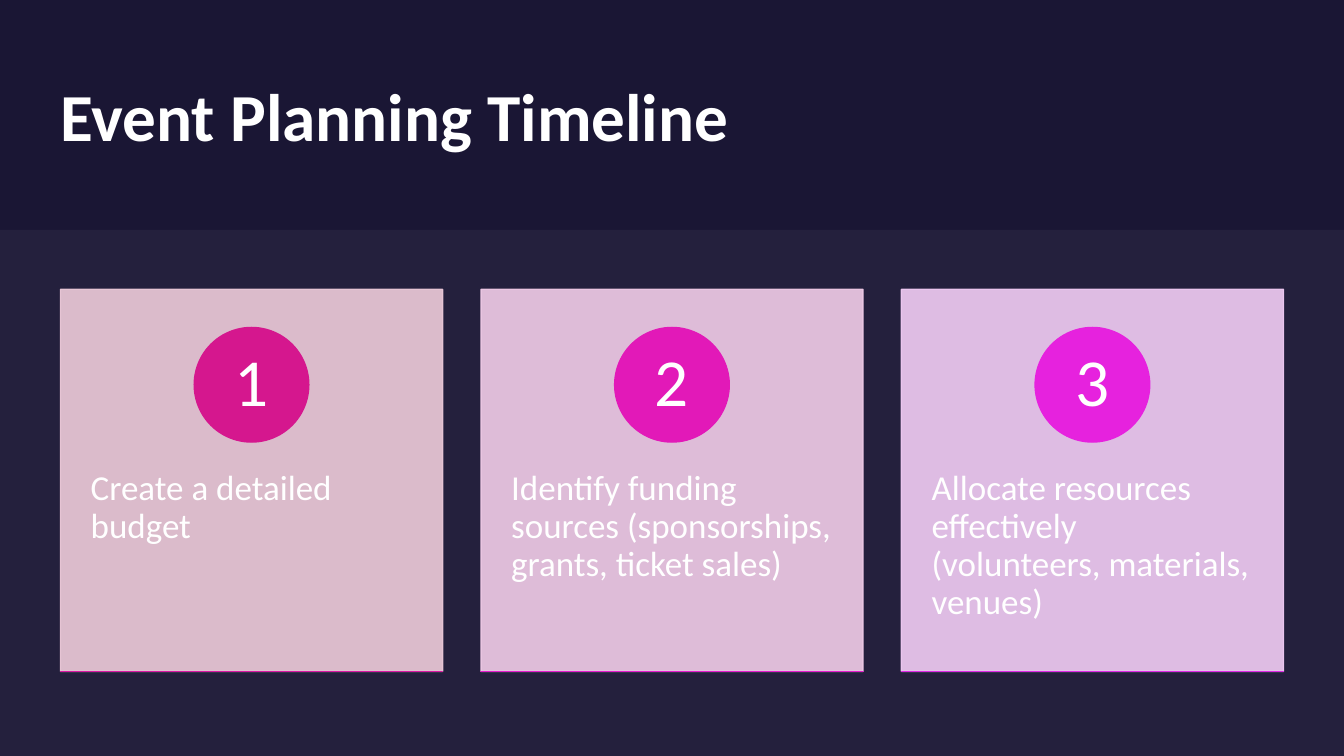
from lxml import etree
from pptx import Presentation
from pptx.dml.color import RGBColor
from pptx.enum.shapes import MSO_SHAPE
from pptx.enum.text import MSO_ANCHOR, MSO_AUTO_SIZE, PP_ALIGN
from pptx.oxml.ns import qn
from pptx.util import Inches, Pt

RECT, OVAL = MSO_SHAPE.RECTANGLE, MSO_SHAPE.OVAL
TOP, MIDDLE = MSO_ANCHOR.TOP, MSO_ANCHOR.MIDDLE
LEFT, CENTER = PP_ALIGN.LEFT, PP_ALIGN.CENTER
NO_FIT = MSO_AUTO_SIZE.NONE

FONT = "Calibri"
WIDTH, HEIGHT = 13.33, 7.5
MARGIN = 0.6
CARD_TOP = 2.87
CARD_SIZE = 3.79
BAND_TOP = 2.28

COLORS = {
    "night": "1A1634",
    "band": "E3E0F2",
    "text": "FFFFFF",
}
STEPS = [
    ("Create a detailed budget", "EFCCDB", "D5178E", "DB18A3"),
    ("Identify funding sources (sponsorships, grants, ticket sales)",
     "F3CDE9", "E219B8", "E61CCD"),
    ("Allocate resources effectively (volunteers, materials, venues)",
     "F3CDF6", "E622DE", "DF29E7"),
]


def inches(box):
    return [Inches(length) for length in box]


def set_opacity(color_format_parent, percent):
    for color in color_format_parent.iter(qn("a:srgbClr")):
        etree.SubElement(color, qn("a:alpha"), val=str(percent * 1000))


def add_panel(shapes, preset, box, color, opacity=100, outlined=True):
    panel = shapes.add_shape(preset, *inches(box))
    panel.shadow.inherit = False
    panel.fill.solid()
    panel.fill.fore_color.rgb = RGBColor.from_string(color)
    if outlined:
        panel.line.color.rgb = RGBColor.from_string(color)
        panel.line.width = Pt(1)
    else:
        panel.line.fill.background()
    if opacity < 100:
        set_opacity(panel._element.spPr, opacity)
    return panel


def write(frame, wording, size, insets, anchor=MIDDLE, align=LEFT,
          bold=False, spacing=0.9):
    frame.text = wording
    frame.word_wrap = True
    frame.auto_size = NO_FIT
    frame.vertical_anchor = anchor
    frame.margin_left = frame.margin_right = Inches(insets[0])
    frame.margin_top = frame.margin_bottom = Inches(insets[1])
    paragraph = frame.paragraphs[0]
    paragraph.alignment = align
    paragraph.line_spacing = spacing
    font = paragraph.runs[0].font
    font.name, font.size, font.bold = FONT, Pt(size), bold
    font.color.rgb = RGBColor.from_string(COLORS["text"])


def add_backdrop(slide):
    slide.background.fill.solid()
    slide.background.fill.fore_color.rgb = RGBColor.from_string(COLORS["night"])
    backdrop = add_panel(slide.shapes, RECT, (0, 0, WIDTH, HEIGHT),
                         COLORS["night"], outlined=False)
    slide.shapes._spTree.insert(2, backdrop._element)
    add_panel(slide.shapes, RECT, (0, BAND_TOP, WIDTH, HEIGHT - BAND_TOP),
              COLORS["band"], opacity=5, outlined=False)


def add_heading(slide, box):
    heading = slide.shapes.title
    heading.left, heading.top, heading.width, heading.height = inches(box)
    write(heading.text_frame, "Event Planning Timeline", 48, (0, 0),
          bold=True, spacing=1.0)


def add_step_card(slide, box, number, step):
    left, top, width, height = box
    wording, card_color, badge_color, edge_color = step
    card = slide.shapes.add_group_shape().shapes
    add_panel(card, RECT, box, card_color, opacity=90)

    description = card.add_textbox(
        *inches((left, top + 0.38 * height, width, 0.6 * height)))
    write(description.text_frame, wording, 25, (0.3, 0.36), anchor=TOP)

    diameter = 0.3 * height
    badge = add_panel(
        card, OVAL,
        (left + (width - diameter) / 2, top + 0.1 * height, diameter, diameter),
        badge_color)
    write(badge.text_frame, str(number), 48, (0.09, 0.01), align=CENTER)

    add_panel(card, RECT, (left, top + height, width, 0), edge_color)


def main():
    deck = Presentation()
    deck.slide_width, deck.slide_height = inches((WIDTH, HEIGHT))
    slide = deck.slides.add_slide(deck.slide_layouts[5])
    add_backdrop(slide)
    add_heading(slide, (MARGIN, MARGIN, 0.6 * WIDTH, 1.08))
    pitch = (WIDTH - 2 * MARGIN - CARD_SIZE) / (len(STEPS) - 1)
    for index, step in enumerate(STEPS):
        box = (MARGIN + index * pitch, CARD_TOP, CARD_SIZE, CARD_SIZE)
        add_step_card(slide, box, index + 1, step)
    deck.save("out.pptx")


if __name__ == "__main__":
    main()
